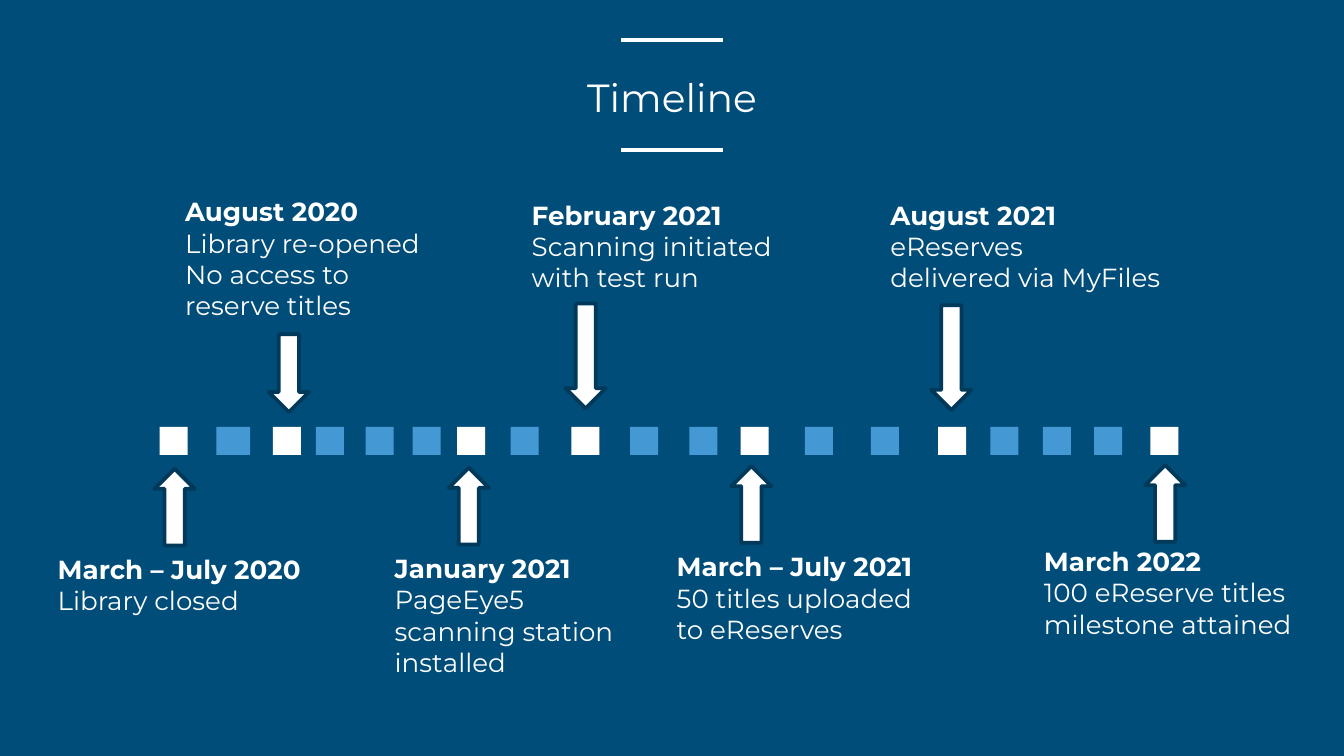
from dataclasses import dataclass

import pptx
import pptx.dml.color
import pptx.enum.shapes
import pptx.enum.text
import pptx.oxml
import pptx.oxml.ns
import pptx.util

Cm = pptx.util.Cm
Pt = pptx.util.Pt
Shapes = pptx.enum.shapes.MSO_SHAPE
Align = pptx.enum.text.PP_ALIGN
Anchor = pptx.enum.text.MSO_ANCHOR


def rgb(value):
    return pptx.dml.color.RGBColor.from_string(value)


@dataclass(frozen=True)
class Theme:
    background: str = "004D79"
    white: str = "FFFFFF"
    blue: str = "4499D4"
    outline: str = "00395A"
    font: str = "Montserrat"
    title_size: float = 21
    body_size: float = 14
    inset: float = 0.25
    indent: float = 0.3


THEME = Theme()

SQUARE = 0.53
ARROW_WIDTH = 0.76

# Left edge of each square on the timeline; milestones are white
MILESTONES = [3.02, 5.16, 8.64, 10.8, 14, 17.73, 21.74]
MONTHS = [5.97, 6.91, 7.8, 9.65, 11.91, 13.03, 15.21, 16.46, 18.72, 19.71, 20.68]
WIDE_MONTH = (4.09, 0.64)

# Text box, arrow (left, top, height), points up, indent, heading, details
EVENTS = [
    ((0.84, 10.21, 5.69, 2.03), (2.92, 8.86, 1.45), True, 0,
     "March – July 2020", ["Library closed"]),
    ((2.95, 3.45, 5.69, 2.87), (5.08, 6.32, 1.47), False, THEME.indent,
     "August 2020", ["Library re-opened No access to reserve titles"]),
    ((6.91, 10.19, 5.28, 2.87), (8.48, 8.84, 1.45), True, THEME.indent,
     "January 2021", ["PageEye5 scanning station installed"]),
    ((9.5, 3.51, 5.69, 2.08), (10.69, 5.74, 1.98), False, THEME.indent,
     "February 2021", ["Scanning initiated with test run"]),
    ((12.24, 10.16, 5.69, 2.31), (13.82, 8.81, 1.45), True, THEME.indent,
     "March – July 2021", ["50 titles uploaded to eReserves"]),
    ((16.28, 3.51, 6.22, 2.31), (17.6, 5.77, 1.98), False, THEME.indent,
     "August 2021", ["eReserves", "delivered via MyFiles"]),
    ((19.18, 10.06, 5.69, 2.64), (21.64, 8.79, 1.45), True, THEME.indent,
     "March 2022", ["100 eReserve titles milestone attained"]),
]


def write_text(shape, lines, size=THEME.body_size, bold_first=False,
               align=Align.LEFT, anchor=Anchor.TOP, indent=0):
    """Fill a shape with one paragraph per line."""
    frame = shape.text_frame
    frame.word_wrap = True
    frame.auto_size = pptx.enum.text.MSO_AUTO_SIZE.NONE
    frame.vertical_anchor = anchor
    frame.margin_left = frame.margin_right = Cm(THEME.inset)
    frame.margin_top = frame.margin_bottom = Cm(THEME.inset)
    for index, line in enumerate(lines):
        paragraph = frame.paragraphs[0] if index == 0 else frame.add_paragraph()
        paragraph.alignment = align
        paragraph.space_before = Pt(0)
        properties = paragraph._p.get_or_add_pPr()
        properties.set("marL", str(Cm(indent)))
        properties.set("indent", "0")
        run = paragraph.add_run()
        run.text = line
        run.font.name = THEME.font
        run.font.size = Pt(size)
        run.font.bold = bold_first and index == 0
        run.font.color.rgb = rgb(THEME.white)


def add_block(slide, kind, box, fill, outline=None):
    shape = slide.shapes.add_shape(kind, *map(Cm, box))
    shape.shadow.inherit = False
    shape.fill.solid()
    shape.fill.fore_color.rgb = rgb(fill)
    if outline:
        shape.line.color.rgb = rgb(outline)
        shape.line.width = Pt(2)
    else:
        shape.line.fill.background()
    return shape


def add_rule(slide, left, right, y):
    rule = slide.shapes.add_connector(
        pptx.enum.shapes.MSO_CONNECTOR.STRAIGHT, Cm(left), Cm(y), Cm(right), Cm(y))
    rule.line.color.rgb = rgb(THEME.white)
    rule.line.width = Pt(2.25)
    properties = rule._element.spPr
    properties.append(pptx.oxml.parse_xml(
        "<a:effectLst %s/>" % pptx.oxml.ns.nsdecls("a")))


def add_header(slide, box):
    """Title with a short centred rule above and below."""
    left, top, width, height = box
    centre = left + width / 2
    for y in (top + 0.35, top + 2.43):
        add_rule(slide, centre - 0.96, centre + 0.96, y)
    title = slide.shapes.title
    title.left, title.top, title.width, title.height = map(Cm, box)
    write_text(title, ["Timeline"], size=THEME.title_size,
               align=Align.CENTER, anchor=Anchor.BOTTOM)


def add_timeline(slide, top):
    squares = [(left, SQUARE, THEME.blue) for left in MONTHS]
    squares.append((*WIDE_MONTH, THEME.blue))
    squares += [(left, SQUARE, THEME.white) for left in MILESTONES]
    for left, width, colour in sorted(squares):
        add_block(slide, Shapes.RECTANGLE, (left, top, width, SQUARE), colour)


def add_event(slide, box, arrow, points_up, indent, heading, details):
    """Event text and the arrow that ties it to the timeline."""
    text_box = slide.shapes.add_textbox(*map(Cm, box))
    write_text(text_box, [heading, *details], bold_first=True, indent=indent)
    left, top, height = arrow
    pointer = add_block(slide, Shapes.DOWN_ARROW, (left, top, ARROW_WIDTH, height),
                        THEME.white, outline=THEME.outline)
    pointer.rotation = 180 if points_up else 0


def main():
    presentation = pptx.Presentation()
    presentation.slide_width = Cm(25.4)
    presentation.slide_height = Cm(14.29)
    slide = presentation.slides.add_slide(presentation.slide_layouts[5])
    slide.background.fill.solid()
    slide.background.fill.fore_color.rgb = rgb(THEME.background)

    add_header(slide, (2.87, 0.41, 19.66, 2.11))
    add_timeline(slide, 8.07)
    for event in EVENTS:
        add_event(slide, *event)

    presentation.save("out.pptx")


if __name__ == "__main__":
    main()
